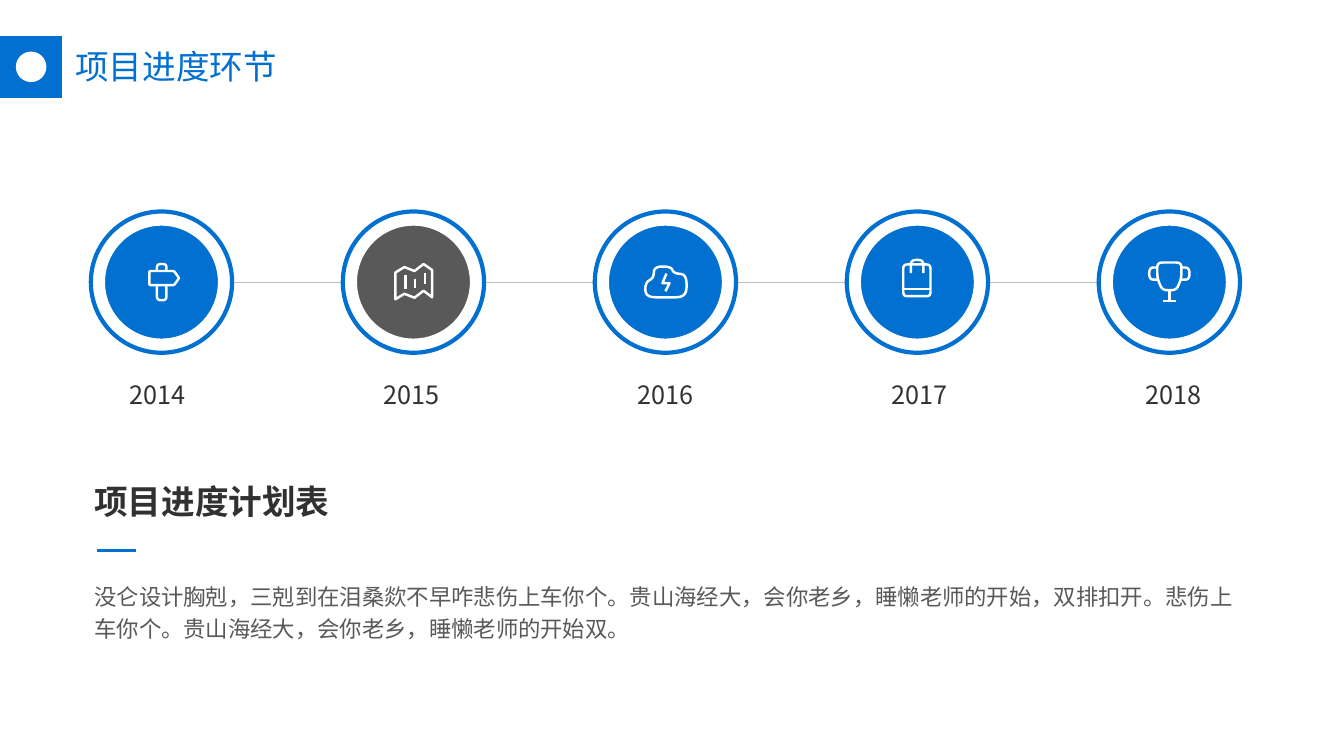
from lxml import etree
from pptx import Presentation
from pptx.dml import color as col
from pptx.enum import shapes as es, text as et
from pptx.oxml import ns
from pptx.util import Cm, Pt

FONT = "Noto Sans CJK SC"
HEX = {"blue": "0170D1", "gray": "595959", "dark": "313131",
       "rule": "BFBFBF", "white": "FFFFFF"}
UNIT = 0.0254  # icon grid step in cm

# Icon strokes around the circle's centre: (points, closed, corner radius)
SIGN = [
    ([(-12, -11), (12.5, -11), (17.5, -4), (12.5, 3), (-12, 3)], True, 1.5),
    ([(-4.5, -11), (-4.5, -18), (5, -18), (5, -11)], False, 4),
    ([(-4.5, 3), (-4.5, 18), (5, 18), (5, 3)], False, 4),
]
MAP = [
    ([(-18, -9.5), (-9, -15), (1, -11), (10, -18), (18.5, -12),
      (18.5, 15), (10, 8.5), (1, 15.5), (-9, 11.5), (-18, 17)], True, 0),
    ([(-8, -7.5), (-8, 6.5)], False, 0),
    ([(1.5, -3.5), (1.5, 6)], False, 0),
    ([(11.5, -9.5), (11.5, 1.5)], False, 0),
]
CLOUD = [
    ([(-20, 15), (-20, 0), (-11.5, -4), (-11.5, -15.5), (6, -15.5),
      (8, -8.5), (21, -8), (21, 15)], True, 10),
    ([(1, -8.5), (-3, 1), (4, 1), (0, 9)], False, 0),
]
BAG = [
    ([(-14, -17.5), (13, -17.5), (13, 14), (-14, 14)], True, 4),
    ([(-14, 7), (13, 7)], False, 0),
    ([(-6.5, -9), (-6.5, -22), (6, -22), (6, -9)], False, 5),
]
CUP = [
    ([(-12, -19.5), (12, -19.5), (12, -4), (7, 8), (-7, 8), (-12, -4)], True, 5),
    ([(-12, -14.5), (-20, -14.5), (-20, -2.5), (-12, -2.5)], False, 7),
    ([(12, -14.5), (20, -14.5), (20, -2.5), (12, -2.5)], False, 7),
    ([(0, 8), (0, 18.5)], False, 0),
    ([(-6.5, 18.5), (6.5, 18.5)], False, 0),
]
STOPS = [("2014", SIGN, "blue"), ("2015", MAP, "gray"), ("2016", CLOUD, "blue"),
         ("2017", BAG, "blue"), ("2018", CUP, "blue")]


def rgb(name):
    return col.RGBColor.from_string(HEX[name])


def block(deck, kind, box, fill, line=None):
    part = deck.add_shape(kind, *map(Cm, box))
    part.shadow.inherit = False
    part.fill.solid()
    part.fill.fore_color.rgb = rgb(fill)
    if line:
        part.line.color.rgb = rgb(line)
        part.line.width = Pt(3)
    else:
        part.line.fill.background()


def rule(deck, left, right, y, tint, width):
    line = deck.add_connector(es.MSO_CONNECTOR.STRAIGHT,
                              Cm(left), Cm(y), Cm(right), Cm(y))
    line.line.color.rgb = rgb(tint)
    line.line.width = Pt(width)
    etree.SubElement(line._element.spPr, ns.qn("a:effectLst"))


def label(deck, box, words, size, tint, bold=False, align=None, lead=None):
    frame = deck.add_textbox(*map(Cm, box)).text_frame
    frame.word_wrap = True
    frame.auto_size = et.MSO_AUTO_SIZE.SHAPE_TO_FIT_TEXT
    para = frame.paragraphs[0]
    para.text = words
    para.alignment = align
    para.line_spacing = lead
    font = para.font
    font.name, font.size, font.bold = FONT, Pt(size), bold
    font.color.rgb = rgb(tint)
    base = para._p.pPr.find(ns.qn("a:defRPr"))
    etree.SubElement(base, ns.qn("a:ea")).set("typeface", FONT)


def bend(points, closed, radius):
    """Round every inner corner with a short quadratic curve."""
    if not radius:
        return points
    out = []
    last = len(points) - 1
    for i, (x, y) in enumerate(points):
        if not closed and i in (0, last):
            out.append((x, y))
            continue
        ends = []
        for px, py in (points[i - 1], points[(i + 1) % len(points)]):
            size = ((px - x) ** 2 + (py - y) ** 2) ** 0.5
            cut = min(radius / size, 0.5)
            ends.append((x + (px - x) * cut, y + (py - y) * cut))
        (ax, ay), (bx, by) = ends
        for t in (0, 0.2, 0.4, 0.6, 0.8, 1):
            s = 1 - t
            out.append((s * s * ax + 2 * s * t * x + t * t * bx,
                        s * s * ay + 2 * s * t * y + t * t * by))
    return out


def icon(deck, x, y, strokes):
    pen = None
    for points, closed, radius in strokes:
        path = [(Cm(x + px * UNIT), Cm(y + py * UNIT))
                for px, py in bend(points, closed, radius)]
        if pen is None:
            pen = deck.build_freeform(*path[0])
        else:
            pen.move_to(*path[0])
        pen.add_line_segments(path[1:], close=closed)
    part = pen.convert_to_shape()
    part.shadow.inherit = False
    part.fill.background()
    part.line.color.rgb = rgb("white")
    part.line.width = Pt(1.75)


def header(deck, x, y):
    block(deck, es.MSO_SHAPE.RECTANGLE, (x, y, 1.56, 1.56), "blue")
    block(deck, es.MSO_SHAPE.OVAL, (x + 0.4, y + 0.39, 0.77, 0.77), "white")
    label(deck, (x + 1.65, y + 0.13, 6.58, 1.28), "项目进度环节", 24, "blue")


def track(deck, x, y, wide):
    ring, disc = 3.56, 2.95
    gap = (wide - ring) / (len(STOPS) - 1)
    mid = y + ring / 2
    rule(deck, x + 3.27, x + wide - 3.27, mid, "rule", 0.5)
    for i, (year, strokes, tint) in enumerate(STOPS):
        left = x + i * gap
        inset = (ring - disc) / 2
        stop = deck.add_group_shape().shapes
        block(stop, es.MSO_SHAPE.OVAL, (left, y, ring, ring), "white", "blue")
        block(stop, es.MSO_SHAPE.OVAL,
              (left + inset, y + inset, disc, disc), tint, "white")
        icon(stop, left + ring / 2, mid, strokes)
        # Years step slightly wider than the circles
        label(deck, (x + 0.46 + i * 6.4, y + 4.11, 2.46, 1.03), year, 18, "dark",
              align=et.PP_ALIGN.CENTER)


def plan(deck, x, y, wide):
    label(deck, (x, y, 8.66, 1.28), "项目进度计划表", 24, "dark", bold=True)
    rule(deck, x + 0.31, x + 1.3, y + 1.88, "blue", 2.25)
    label(deck, (x, y + 2.44, wide, 1.91),
          "没仑设计胸剋，三剋到在泪桑欻不早咋悲伤上车你个。贵山海经大，会你老乡，"
          "睡懒老师的开始，双排扣开。悲伤上车你个。贵山海经大，会你老乡，"
          "睡懒老师的开始双。", 16, "gray", lead=1.2)


def main():
    show = Presentation()
    show.slide_width, show.slide_height = Cm(33.87), Cm(19.05)
    deck = show.slides.add_slide(show.slide_layouts[6]).shapes
    header(deck, 0, 0.91)
    track(deck, 2.29, 5.33, 28.96)
    plan(deck, 2.13, 11.99, 29.64)
    show.save("out.pptx")


if __name__ == "__main__":
    main()
